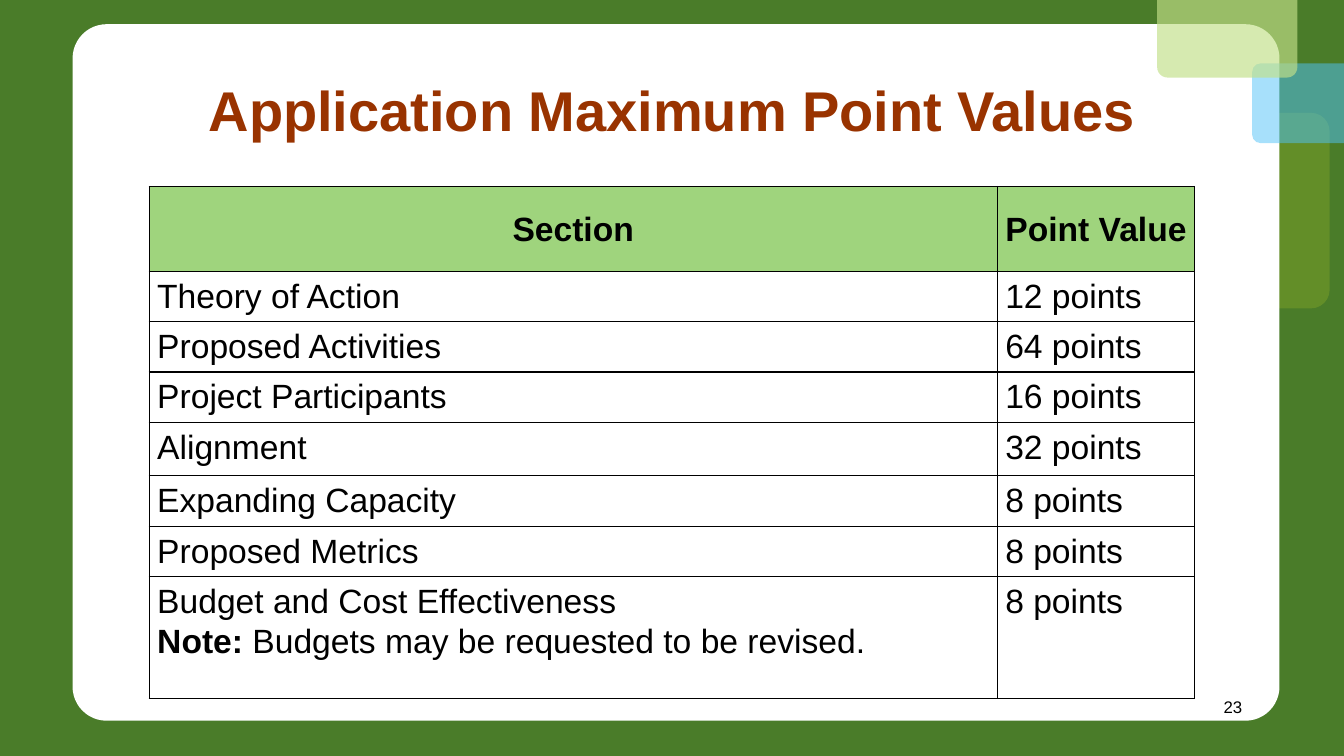
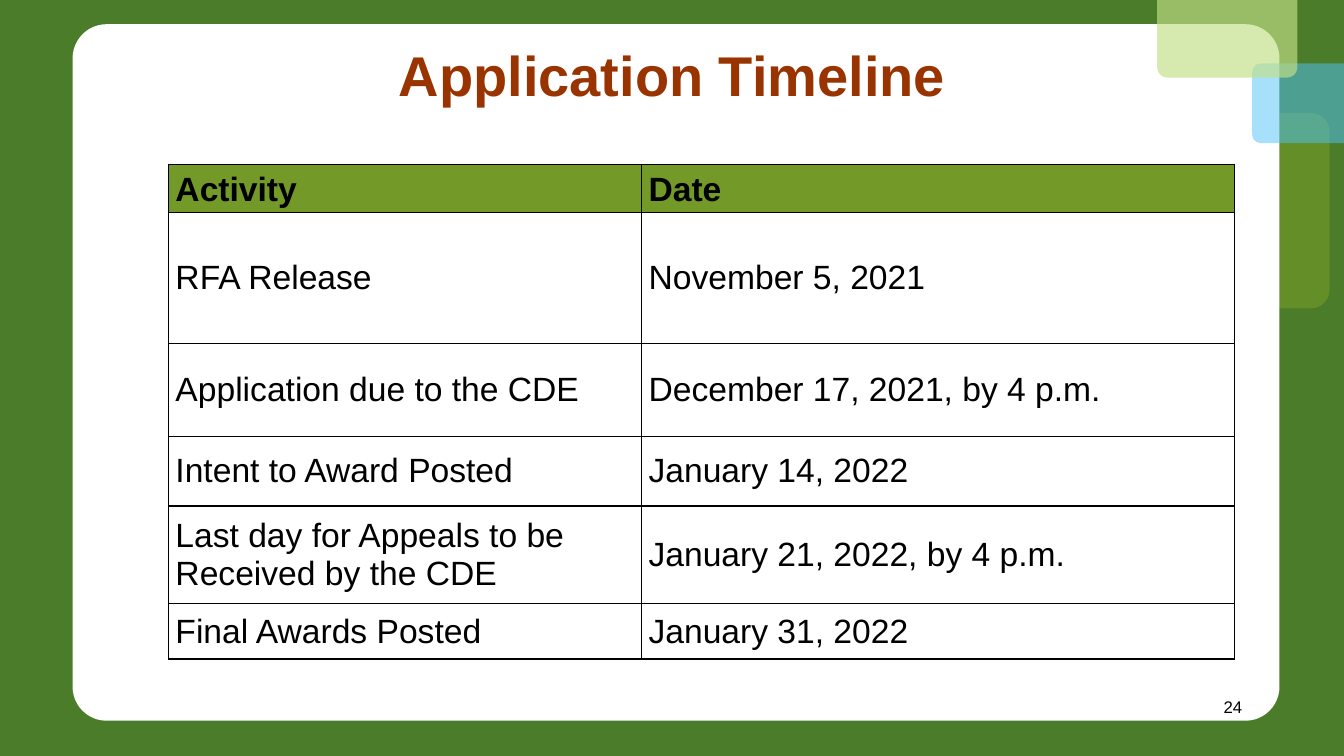
"""Build two slides on application scoring and timeline."""
from lxml.etree import SubElement
from pptx import Presentation
from pptx.dml.color import RGBColor
from pptx.enum.shapes import MSO_SHAPE
from pptx.enum.text import MSO_ANCHOR, MSO_AUTO_SIZE, PP_ALIGN
from pptx.oxml import parse_xml
from pptx.oxml.ns import nsdecls, qn
from pptx.util import Inches, Pt

INK = {"back": "4A7C29", "card": "FFFFFF", "olive": "739A28", "sky": "51C3F9",
       "lime": "C2E088", "title": "993300", "text": "000000", "mint": "9FD47D"}
WIDE, HIGH = Inches(13.33), Inches(7.5)


def box(x, y, w, h):
    """Turn percent shares of the slide into lengths."""
    return [int(part * side / 100) for part, side in zip((x, y, w, h), (WIDE, HIGH) * 2)]


def write(frame, text, size=24, color="text", bold=False, align=PP_ALIGN.LEFT, line=1.0, after=0):
    """Fill a text frame; text between double stars is bold."""
    frame.word_wrap = True
    for row, words in enumerate(text.split("\n")):
        para = frame.add_paragraph() if row else frame.paragraphs[0]
        para.alignment, para.line_spacing = align, line
        para.space_before, para.space_after = Pt(0), Pt(after)
        for turn, piece in enumerate(words.split("**")):
            if piece:
                run = para.add_run()
                run.text = piece
                run.font.name, run.font.size = "Arial", Pt(size)
                run.font.bold = bold or turn % 2 == 1
                run.font.color.rgb = RGBColor.from_string(INK[color])


DECOR = [
    ((82.28, 14.93, 16.65, 25.87), 0.095, "olive", 62),
    ((5.4, 3.2, 89.8, 92.13), 0.049, "card", 100),
    ((93.17, 8.4, 16.65, 10.53), 0.103, "sky", 50),
    ((86.1, -7.07, 10.43, 17.33), 0.079, "lime", 66),
]
PAGES = [
    {"title": "Application Maximum Point Values", "top": (11.1, 5.33, 77.8, 19.33),
     "grid": (11.1, 24.67, 77.8, 68), "cols": [63.1, 14.7],
     "rows": [11.2, 6.67, 6.67, 6.67, 7.07, 6.67, 6.67, 16.13],
     "head": "mint", "align": PP_ALIGN.CENTER, "pad": (0.6, 0.53),
     "anchor": MSO_ANCHOR.TOP, "line": 1.07, "after": 0,
     "cells": [("Section", "Point Value"),
               ("Theory of Action", "12 points"),
               ("Proposed Activities", "64 points"),
               ("Project Participants", "16 points"),
               ("Alignment", "32 points"),
               ("Expanding Capacity", "8 points"),
               ("Proposed Metrics", "8 points"),
               ("Budget and Cost Effectiveness\n"
                "**Note: **Budgets may be requested to be revised.", "8 points")]},
    {"title": "Application Timeline", "top": (11.1, 4.4, 77.8, 11.87),
     "grid": (12.53, 21.73, 79.3, 65.33), "cols": [35.2, 44.1],
     "rows": [6.4, 17.33, 12.27, 9.2, 12.93, 7.33],
     "head": "olive", "align": PP_ALIGN.LEFT, "pad": (0.53, 0),
     "anchor": MSO_ANCHOR.MIDDLE, "line": 1.0, "after": 12,
     "cells": [("Activity", "Date"),
               ("RFA Release", "November 5, 2021"),
               ("Application due to the CDE", "December 17, 2021, by 4 p.m."),
               ("Intent to Award Posted", "January 14, 2022"),
               ("Last day for Appeals to be Received by the CDE",
                "January 21, 2022, by 4 p.m."),
               ("Final Awards Posted", "January 31, 2022")]},
]

deck = Presentation()
deck.slide_width, deck.slide_height = WIDE, HIGH
layout = deck.slide_layouts[5]
layout.background.fill.solid()
layout.background.fill.fore_color.rgb = RGBColor.from_string(INK["back"])
for holder in list(layout.placeholders):
    if holder.placeholder_format.idx:
        layout.shapes.element.remove(holder.element)
slides = [deck.slides.add_slide(layout) for page in PAGES]

panels = []
for area, curve, color, alpha in DECOR:
    panel = slides[0].shapes.add_shape(MSO_SHAPE.ROUNDED_RECTANGLE, *box(*area))
    panel.adjustments[0] = curve
    panel.shadow.inherit = False
    panel.line.fill.background()
    panel.fill.solid()
    panel.fill.fore_color.rgb = RGBColor.from_string(INK[color])
    tint = next(panel.element.iter(qn("a:srgbClr")))
    SubElement(tint, qn("a:alpha")).set("val", str(alpha * 1000))
    panels.append(panel)
for panel in panels:
    layout.shapes.element.append(panel.element)

for number, (slide, page) in enumerate(zip(slides, PAGES), 23):
    title = slide.shapes.title
    title.left, title.top, title.width, title.height = box(*page["top"])
    title.text_frame.auto_size = MSO_AUTO_SIZE.NONE
    title.text_frame.vertical_anchor = MSO_ANCHOR.MIDDLE
    write(title.text_frame, page["title"], size=40, color="title", bold=True,
          align=PP_ALIGN.CENTER, line=0.9)

    cells = page["cells"]
    frame = slide.shapes.add_table(len(cells), len(cells[0]), *box(*page["grid"]))
    table = frame.table
    table.first_row = table.horz_banding = False
    for col, share in zip(table.columns, page["cols"]):
        col.width = int(WIDE * share / 100)
    for row, share in zip(table.rows, page["rows"]):
        row.height = int(HIGH * share / 100)
    side, rise = box(*page["pad"], 0, 0)[:2]
    for r, texts in enumerate(cells):
        for c, text in enumerate(texts):
            cell = table.cell(r, c)
            cell.margin_left = cell.margin_right = side
            cell.margin_top = cell.margin_bottom = rise
            if r:
                cell.vertical_anchor = page["anchor"]
                cell.fill.background()
                write(cell.text_frame, text, line=page["line"], after=page["after"])
            else:
                cell.vertical_anchor = MSO_ANCHOR.MIDDLE
                cell.fill.solid()
                cell.fill.fore_color.rgb = RGBColor.from_string(INK[page["head"]])
                write(cell.text_frame, text, bold=True, align=page["align"], line=1.07)
    for props in frame.element.iter(qn("a:tcPr")):
        for spot, edge in enumerate("LRTB"):
            props.insert(spot, parse_xml(
                f'<a:ln{edge} {nsdecls("a")} w="12700"><a:solidFill>'
                f'<a:srgbClr val="{INK["text"]}"/></a:solidFill></a:ln{edge}>'))

    foot = slide.shapes.add_textbox(*box(70.67, 90.8, 22.5, 5.33)).text_frame
    foot.vertical_anchor = MSO_ANCHOR.MIDDLE
    write(foot, str(number), size=12, align=PP_ALIGN.RIGHT)

deck.save("out.pptx")
